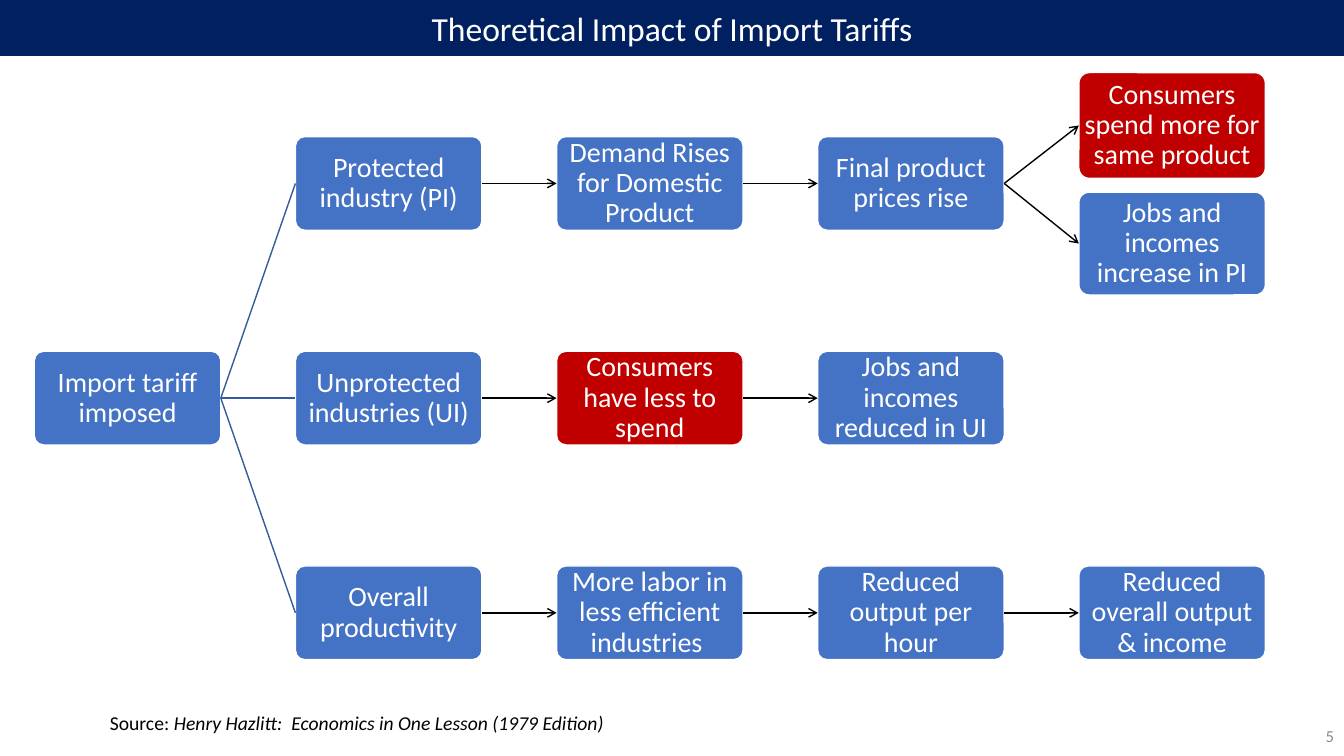
import pptx
import pptx.util
import pptx.dml.color
import pptx.enum.shapes
import pptx.enum.text
import pptx.oxml

Inches = pptx.util.Inches
Pt = pptx.util.Pt
RGBColor = pptx.dml.color.RGBColor
Align = pptx.enum.text.PP_ALIGN
Anchor = pptx.enum.text.MSO_ANCHOR

WHITE = RGBColor(0xFF, 0xFF, 0xFF)
BLACK = RGBColor(0, 0, 0)
GRAY = RGBColor(0x8C, 0x8C, 0x8C)
NAVY = RGBColor(0x00, 0x20, 0x60)
BLUE = RGBColor(0x44, 0x72, 0xC4)
DARK_BLUE = RGBColor(0x36, 0x5B, 0x9D)
RED = RGBColor(0xC0, 0, 0)

TITLE = "Theoretical Impact of Import Tariffs"
SOURCE = [("Source: ", False),
          ("Henry Hazlitt:  Economics in One Lesson (1979 Edition)", True)]
PAGE_NUMBER = "5"

BOX_HEIGHT = 0.93
BOXES = {
    "tariff": (0, 1, "Import tariff imposed", BLUE, BOX_HEIGHT),
    "protected": (1, 0, "Protected industry (PI)", BLUE, BOX_HEIGHT),
    "demand": (2, 0, "Demand Rises for Domestic Product", BLUE, BOX_HEIGHT),
    "prices": (3, 0, "Final product prices rise", BLUE, BOX_HEIGHT),
    "spend more": (4, -0.27, "Consumers spend more for same product", RED, 1.05),
    "jobs up": (4, 0.28, "Jobs and incomes increase in PI", BLUE, 1.02),
    "unprotected": (1, 1, "Unprotected industries (UI)", BLUE, BOX_HEIGHT),
    "spend less": (2, 1, "Consumers have less to spend", RED, BOX_HEIGHT),
    "jobs down": (3, 1, "Jobs and incomes reduced in UI", BLUE, BOX_HEIGHT),
    "productivity": (1, 2, "Overall productivity", BLUE, BOX_HEIGHT),
    "labor": (2, 2, "More labor in less efficient industries ", BLUE, BOX_HEIGHT),
    "output": (3, 2, "Reduced output per hour", BLUE, BOX_HEIGHT),
    "income": (4, 2, "Reduced overall output & income", BLUE, BOX_HEIGHT),
}
BRANCHES = [("tariff", "protected"), ("tariff", "unprotected"), ("tariff", "productivity")]
ARROWS = [
    ("protected", "demand"), ("demand", "prices"),
    ("prices", "spend more"), ("prices", "jobs up"),
    ("unprotected", "spend less"), ("spend less", "jobs down"),
    ("productivity", "labor"), ("labor", "output"), ("output", "income"),
]

SLIDE_WIDTH, SLIDE_HEIGHT = 13.33, 7.5
GRID_LEFT, COLUMN_STEP, BOX_WIDTH = 0.34, 2.59, 1.85
FIRST_ROW_CENTER, ROW_STEP = 1.82, 2.13
LEFT_SITE, RIGHT_SITE = 1, 3
BOX_MARGINS = {side: Inches(0.01) for side in
               ("margin_left", "margin_right", "margin_top", "margin_bottom")}


def set_attributes(target, values):
    for name, value in values.items():
        setattr(target, name, value)


def write_text(shape, runs, size, color, align, frame_format, line_spacing=1.0):
    frame = shape.text_frame
    set_attributes(frame, {"word_wrap": True, "vertical_anchor": Anchor.MIDDLE,
                           "auto_size": pptx.enum.text.MSO_AUTO_SIZE.NONE,
                           **frame_format})
    paragraph = frame.paragraphs[0]
    set_attributes(paragraph, {"alignment": align, "line_spacing": line_spacing})
    for text, italic in runs:
        run = paragraph.add_run()
        run.text = text
        set_attributes(run.font, {"name": "Calibri", "size": Pt(size), "italic": italic})
        run.font.color.rgb = color


def paint(shape, fill, line):
    shape.fill.solid()
    shape.fill.fore_color.rgb = fill
    shape.line.color.rgb = line
    shape.line.width = Pt(1)


def add_box(slide, column, row, text, fill, height):
    center = FIRST_ROW_CENTER + row * ROW_STEP
    box = slide.shapes.add_shape(
        pptx.enum.shapes.MSO_SHAPE.ROUNDED_RECTANGLE,
        Inches(GRID_LEFT + column * COLUMN_STEP), Inches(center - height / 2),
        Inches(BOX_WIDTH), Inches(height))
    box.adjustments[0] = 0.1
    box.shadow.inherit = False
    paint(box, fill, WHITE)
    write_text(box, [(text, False)], 20, WHITE, Align.CENTER, BOX_MARGINS, 0.9)
    return box


def connect(slide, start, end, color, arrow):
    connector = slide.shapes.add_connector(
        pptx.enum.shapes.MSO_CONNECTOR.STRAIGHT, 0, 0, 0, 0)
    connector.begin_connect(start, RIGHT_SITE)
    connector.end_connect(end, LEFT_SITE)
    connector.line.color.rgb = color
    connector.line.width = Pt(1)
    if arrow:
        head = pptx.oxml.parse_xml(
            '<a:tailEnd xmlns:a="http://schemas.openxmlformats.org/drawingml/2006/main"'
            ' type="arrow"/>')
        connector.line._get_or_add_ln().append(head)
    effects = pptx.oxml.parse_xml(
        '<a:effectLst xmlns:a="http://schemas.openxmlformats.org/drawingml/2006/main"/>')
    connector._element.spPr.append(effects)


def main():
    presentation = pptx.Presentation()
    set_attributes(presentation, {"slide_width": Inches(SLIDE_WIDTH),
                                  "slide_height": Inches(SLIDE_HEIGHT)})
    slide = presentation.slides.add_slide(presentation.slide_layouts[5])

    title = slide.shapes.title
    set_attributes(title, {"left": 0, "top": 0, "width": Inches(SLIDE_WIDTH),
                           "height": Inches(0.55)})
    paint(title, NAVY, NAVY)
    write_text(title, [(TITLE, False)], 24, WHITE, Align.CENTER, {})

    boxes = {name: add_box(slide, *content) for name, content in BOXES.items()}
    for start, end in BRANCHES:
        connect(slide, boxes[start], boxes[end], DARK_BLUE, False)
    for start, end in ARROWS:
        connect(slide, boxes[start], boxes[end], BLACK, True)

    source = slide.shapes.add_textbox(Inches(0.99), Inches(7), Inches(5.15), Inches(0.34))
    write_text(source, SOURCE, 14, BLACK, Align.LEFT,
               {"word_wrap": False, "vertical_anchor": Anchor.TOP})
    number = slide.shapes.add_textbox(Inches(SLIDE_WIDTH - 3), Inches(7.1), Inches(3), Inches(0.4))
    write_text(number, [(PAGE_NUMBER, False)], 12, GRAY, Align.RIGHT, {})

    presentation.save("out.pptx")


if __name__ == "__main__":
    main()
